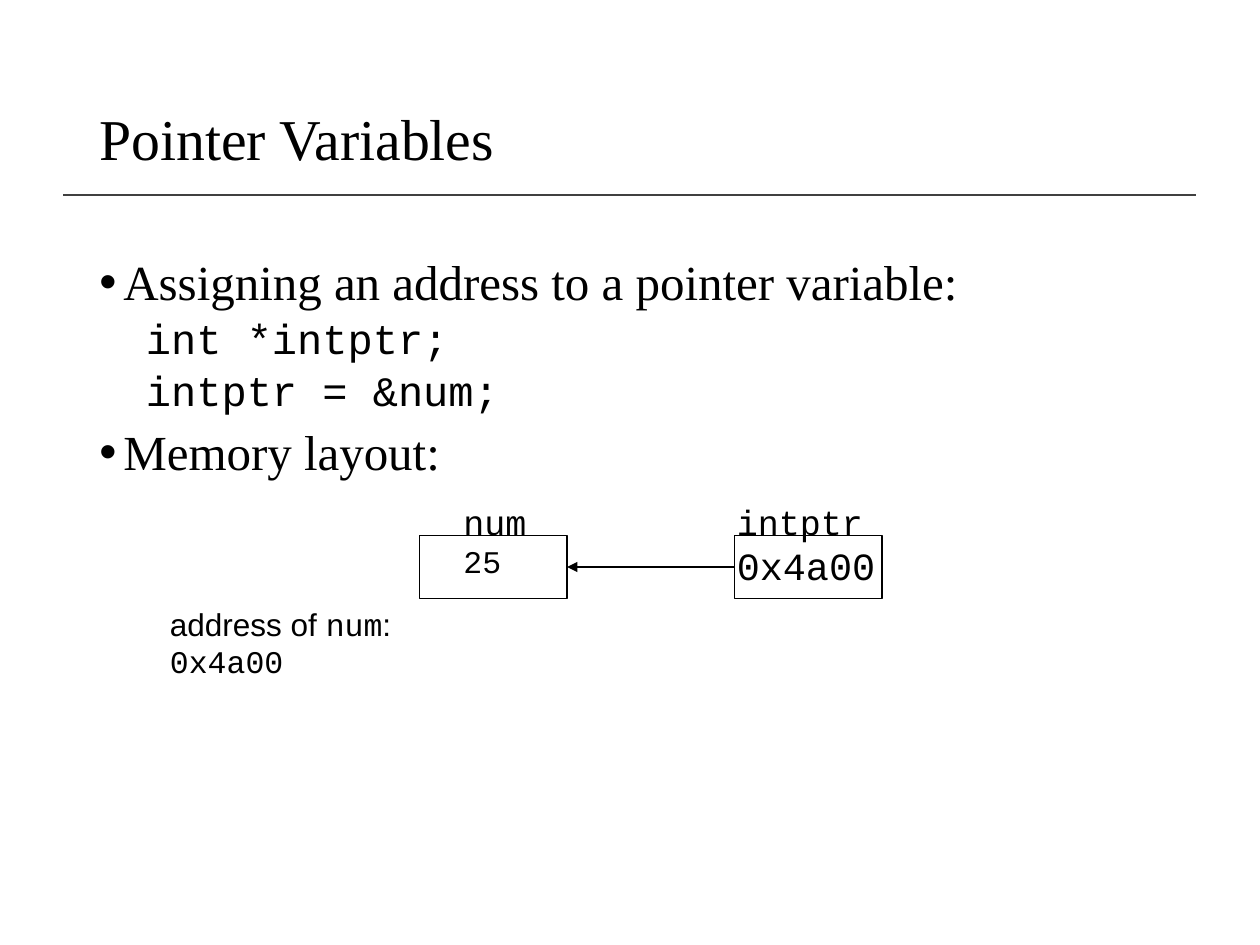
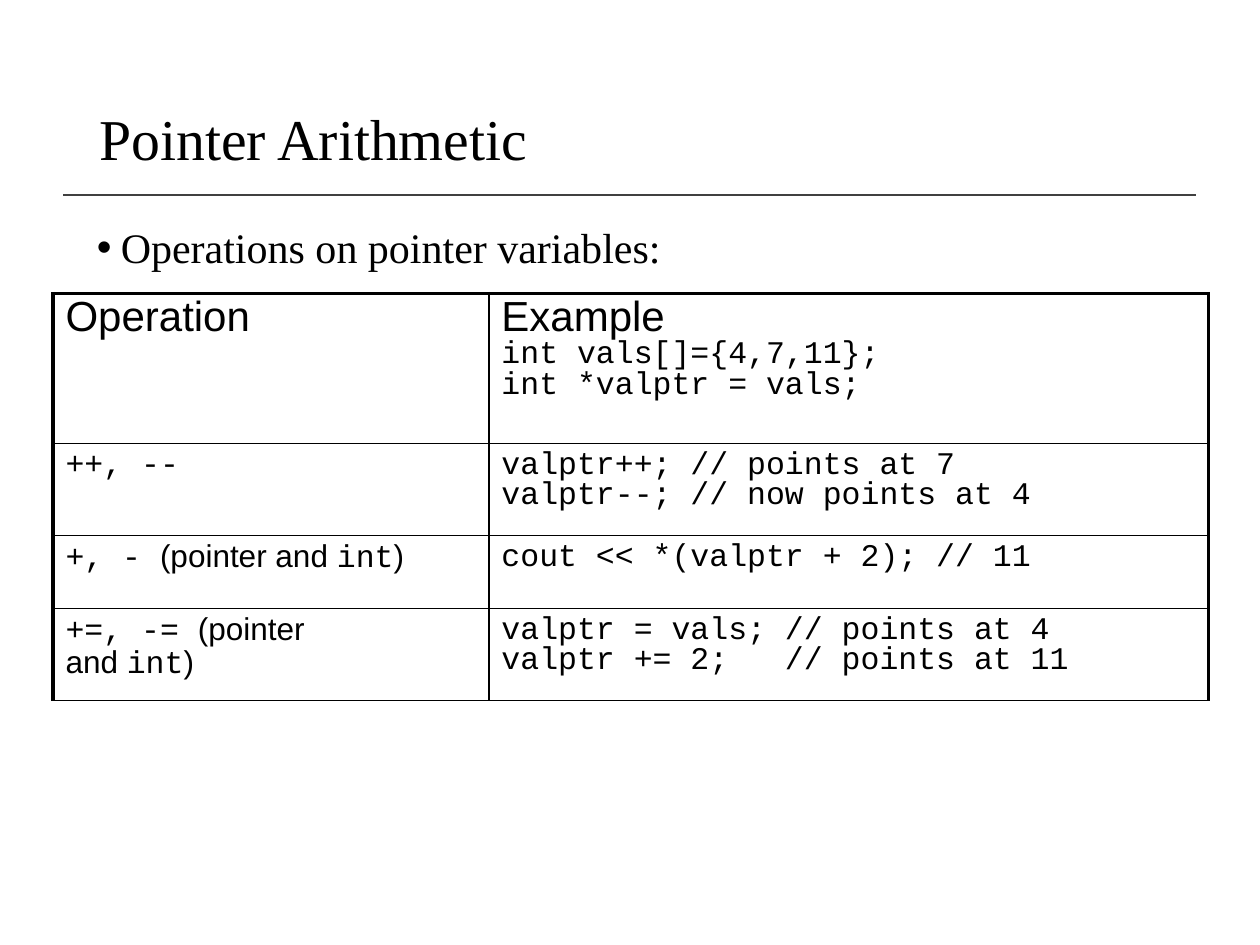
import lxml.etree
import pptx
import pptx.dml.color
import pptx.enum.shapes
import pptx.enum.text
import pptx.oxml.ns
import pptx.util
from dataclasses import dataclass
from pptx.util import Inches


@dataclass(frozen=True)
class Theme:
    ink: pptx.dml.color.RGBColor = pptx.dml.color.RGBColor(0, 0, 0)
    rule: pptx.dml.color.RGBColor = pptx.dml.color.RGBColor(0x40, 0x40, 0x40)
    serif: str = "Times New Roman"
    sans: str = "Arial"
    mono: str = "Courier New"
    title: int = 33
    bullet: int = 28
    code: int = 24
    value: int = 22
    name: int = 20
    small: int = 18
    thin: float = 0.75
    medium: float = 1
    thick: float = 2.25


theme = Theme()
qn = pptx.oxml.ns.qn


def write(frame, paragraphs, line_spacing=1.0):
    """Fill a text frame; each paragraph is a list of (text, font, size) runs."""
    for index, pieces in enumerate(paragraphs):
        paragraph = frame.paragraphs[0] if index == 0 else frame.add_paragraph()
        paragraph.line_spacing = line_spacing
        for text, font, size in pieces:
            run = paragraph.add_run()
            run.text = text
            run.font.name = font
            run.font.size = pptx.util.Pt(size)
            run.font.color.rgb = theme.ink


def add_line(slide, start, end, color, width):
    line = slide.shapes.add_connector(
        pptx.enum.shapes.MSO_CONNECTOR.STRAIGHT,
        *(Inches(value) for value in (*start, *end)))
    line.line.color.rgb = color
    line.line.width = pptx.util.Pt(width)
    lxml.etree.SubElement(line._element.spPr, qn("a:effectLst"))
    return line


prs = pptx.Presentation()
prs.slide_width, prs.slide_height = Inches(10), Inches(7.5)

# Title, rule and body text of both slides; a body line is (text, size, is_code)
outlines = [
    ("Pointer Variables", (0.69, 2, 8.62, 4.76), [
        ("Assigning an address to a pointer variable:", theme.bullet, False),
        ("int *intptr;", theme.code, True),
        ("intptr = &num;", theme.code, True),
        ("Memory layout:", theme.bullet, False),
    ]),
    ("Pointer Arithmetic", (0.67, 1.75, 8.58, 0.55), [
        ("Operations on pointer variables:", theme.code, False),
    ]),
]
slides = []
for title_text, body_area, body_lines in outlines:
    slide = prs.slides.add_slide(prs.slide_layouts[6])
    slides.append(slide)
    add_line(slide, (0.5, 1.55), (9.49, 1.55), theme.rule, theme.medium)

    title = slide.shapes.add_textbox(
        Inches(0.69), Inches(0.4), Inches(8.62), Inches(1.45)).text_frame
    title.word_wrap = True
    title.vertical_anchor = pptx.enum.text.MSO_ANCHOR.MIDDLE
    write(title, [[(title_text, theme.serif, theme.title)]], 0.9)

    body = slide.shapes.add_textbox(*(Inches(value) for value in body_area)).text_frame
    body.word_wrap = True
    write(body, [[(text, theme.mono if is_code else theme.serif, size)]
                 for text, size, is_code in body_lines], 0.9)
    for index, (paragraph, (_, _, is_code)) in enumerate(zip(body.paragraphs, body_lines)):
        if index:
            paragraph.space_before = pptx.util.Pt(3.8 if is_code else 7.5)
        properties = paragraph._p.get_or_add_pPr()
        properties.set("marL", str(Inches(0.56 if is_code else 0.19)))
        properties.set("indent", str(Inches(-0.19)))
        if is_code:
            lxml.etree.SubElement(properties, qn("a:buNone"))
        else:
            lxml.etree.SubElement(properties, qn("a:buFont"), typeface=theme.sans)
            lxml.etree.SubElement(properties, qn("a:buChar"), char="•")

variables_slide, arithmetic_slide = slides

# Memory layout: two cells, their labels and the pointer arrow
cell_top, cell_width, cell_height = 4.25, 1.17, 0.5
num_left, intptr_left = 3.33, 5.83
for left in (num_left, intptr_left):
    memory_cell = variables_slide.shapes.add_shape(
        pptx.enum.shapes.MSO_SHAPE.RECTANGLE, Inches(left), Inches(cell_top),
        Inches(cell_width), Inches(cell_height))
    memory_cell.shadow.inherit = False
    memory_cell.fill.background()
    memory_cell.line.color.rgb = theme.ink
    memory_cell.line.width = pptx.util.Pt(theme.thin)

labels = [
    ((3.58, 3.92, 0.7, 0.43), [("num", theme.mono, theme.name)]),
    ((5.75, 3.92, 1.2, 0.43), [("intptr", theme.mono, theme.name)]),
    ((3.58, cell_top, 0.5, 0.4), [("25", theme.mono, theme.small)]),
    ((5.75, cell_top, 1.3, 0.47), [("0x4a00", theme.mono, theme.value)]),
    ((1.25, 4.75, 2.92, 0.4), [("address of ", theme.sans, theme.small),
                               ("num", theme.mono, theme.small),
                               (": ", theme.sans, theme.small),
                               ("0x4a00", theme.mono, theme.small)]),
]
for area, pieces in labels:
    label = variables_slide.shapes.add_textbox(
        *(Inches(value) for value in area)).text_frame
    label.word_wrap = False
    label.auto_size = pptx.enum.text.MSO_AUTO_SIZE.SHAPE_TO_FIT_TEXT
    write(label, [pieces])

arrow_y = cell_top + cell_height / 2
pointer = add_line(variables_slide, (intptr_left, arrow_y),
                   (num_left + cell_width, arrow_y), theme.ink, theme.thin)
lxml.etree.SubElement(pointer.line._get_or_add_ln(), qn("a:tailEnd"), type="triangle")

# Table of pointer operations
heading = (theme.sans, theme.code)
code = (theme.mono, theme.small)
prose = (theme.sans, theme.small)
operations = [
    ([[("Operation", *heading)]],
     [[("Example", *heading)],
      [("int vals[]={4,7,11};", *code)],
      [("int *valptr = vals;", *code)]]),
    ([[("++, --", *code)]],
     [[("valptr++; // points at 7", *code)],
      [("valptr--; // now points at 4", *code)]]),
    ([[("+, - ", *code), ("(pointer and ", *prose), ("int", *code), (")", *prose)]],
     [[("cout << *(valptr + 2); // 11", *code)]]),
    ([[("+=, -= ", *code), ("(pointer", *prose)],
      [("and ", *prose), ("int", *code), (")", *prose)]],
     [[("valptr = vals; // points at 4", *code)],
      [("valptr += 2;   // points at 11", *code)]]),
]
column_widths = (3.46, 5.71)
row_heights = (1.19, 0.73, 0.58, 0.73)
table = arithmetic_slide.shapes.add_table(
    len(row_heights), len(column_widths), Inches(0.42), Inches(2.33),
    Inches(sum(column_widths)), Inches(sum(row_heights))).table
table.first_row = table.horz_banding = False
for column, width in zip(table.columns, column_widths):
    column.width = Inches(width)
for row, height in zip(table.rows, row_heights):
    row.height = Inches(height)

for row_index, operation in enumerate(operations):
    for column_index, paragraphs in enumerate(operation):
        cell = table.cell(row_index, column_index)
        cell.fill.background()
        write(cell.text_frame, paragraphs, 0.85)
        thick_edges = {
            "L": column_index == 0,
            "R": column_index == len(column_widths) - 1,
            "T": row_index == 0,
            "B": False,
        }
        cell_properties = cell._tc.get_or_add_tcPr()
        for position, (edge, is_thick) in enumerate(thick_edges.items()):
            width = theme.thick if is_thick else theme.medium
            border = cell_properties.makeelement(
                qn(f"a:ln{edge}"), {"w": str(pptx.util.Pt(width))})
            fill = lxml.etree.SubElement(border, qn("a:solidFill"))
            lxml.etree.SubElement(fill, qn("a:srgbClr"), val=str(theme.ink))
            cell_properties.insert(position, border)

prs.save("out.pptx")
